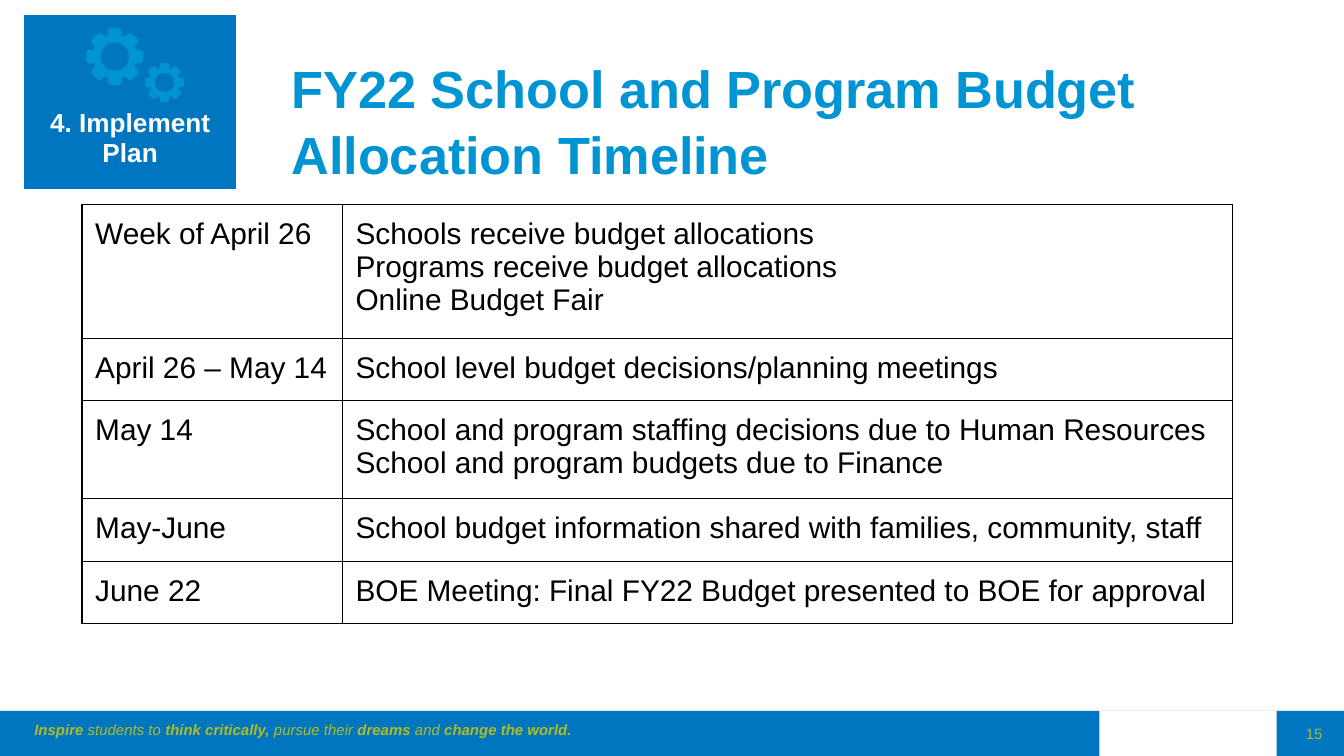
from math import cos, radians, sin

from lxml.etree import SubElement
from pptx import Presentation
from pptx.dml.color import RGBColor as Rgb
from pptx.enum.shapes import MSO_SHAPE as Kind
from pptx.enum.text import MSO_ANCHOR as Anchor, PP_ALIGN as Align
from pptx.oxml.ns import qn
from pptx.util import Cm, Pt

HUES = {"blue": "0076C0", "sky": "0194D3", "lime": "B0BC22",
        "white": "FFFFFF", "black": "000000"}

MOTTO = [("Inspire", True), (" students to ", False),
         ("think critically,", True), (" pursue their ", False),
         ("dreams", True), (" and ", False), ("change the world.", True)]

DATES = [
    ("Week of April 26", ["Schools receive budget allocations",
                          "Programs receive budget allocations",
                          "Online Budget Fair"], 2.44),
    ("April 26 – May 14",
     ["School level budget decisions/planning meetings"], 1.18),
    ("May 14", ["School and program staffing decisions due to Human Resources",
                "School and program budgets due to Finance"], 1.83),
    ("May-June",
     ["School budget information shared with families, community, staff"], 1.18),
    ("June 22",
     ["BOE Meeting: Final FY22 Budget presented to BOE for approval"], 1.18),
]


class Deck:
    """Hold the style and the current slide, and draw each kind of element."""

    font = "Arial"
    pad = Cm(0.25)

    def __init__(self, wide, high):
        self.show = Presentation()
        self.show.slide_width, self.show.slide_height = Cm(wide), Cm(high)
        self.slide = self.show.slides.add_slide(self.show.slide_layouts[6])

    def hue(self, name):
        return Rgb.from_string(HUES[name])

    def fill_text(self, frame, paras, size, hue, align=Align.LEFT, **style):
        frame.word_wrap = True
        for i, runs in enumerate(paras):
            para = frame.add_paragraph() if i else frame.paragraphs[0]
            para.alignment = align
            for text, bold in runs:
                run = para.add_run()
                run.text = text
                form = {"name": self.font, "size": Pt(size), "bold": bold, **style}
                for key, val in form.items():
                    setattr(run.font, key, val)
                run.font.color.rgb = self.hue(hue)

    def inset(self, item, **over):
        sides = ("left", "top", "right", "bottom")
        for key, val in {**dict.fromkeys(sides, self.pad), **over}.items():
            setattr(item, f"margin_{key}", val)

    def text(self, spot, paras, size, hue, anchor=Anchor.TOP, space=1, **style):
        frame = self.slide.shapes.add_textbox(*map(Cm, spot)).text_frame
        self.inset(frame)
        frame.vertical_anchor = anchor
        self.fill_text(frame, paras, size, hue, **style)
        for para in frame.paragraphs:
            para.line_spacing = space

    def shape(self, kind, spot, hue, home=None, turn=0):
        shape = (home or self.slide).shapes.add_shape(kind, *map(Cm, spot))
        shape.shadow.inherit = False
        shape.fill.solid()
        shape.fill.fore_color.rgb = self.hue(hue)
        shape.line.fill.background()
        shape.rotation = turn

    def gear(self, x, y, size):
        group = self.slide.shapes.add_group_shape()

        def part(kind, side, hue, dx=0, dy=0, turn=0):
            spot = (x + dx - side / 2, y + dy - side / 2, side, side)
            self.shape(kind, spot, hue, group, turn)

        part(Kind.OVAL, size, "sky")
        orbit = 0.49 * size
        for turn in range(0, 360, 45):
            part(Kind.SNIP_2_SAME_RECTANGLE, 0.3 * size, "sky",
                 orbit * sin(radians(turn)), -orbit * cos(radians(turn)), turn)
        part(Kind.OVAL, 0.64 * size, "blue")

    def table(self, x, y, cols, rows):
        spot = (x, y, sum(cols), sum(rows))
        grid = self.slide.shapes.add_table(
            len(rows), len(cols), *map(Cm, spot)).table
        grid.first_row = grid.horz_banding = False
        for col, wide in zip(grid.columns, cols):
            col.width = Cm(wide)
        for row, high in zip(grid.rows, rows):
            row.height = Cm(high)
        return grid

    def cell(self, cell, paras, size, hue, edge, fill=None, top=None, **style):
        self.inset(cell, top=top or self.pad)
        props = cell._tc.get_or_add_tcPr()
        for side in ("lnL", "lnR", "lnT", "lnB"):
            line = SubElement(props, qn(f"a:{side}"), w=str(Pt(0.75)))
            solid = SubElement(line, qn("a:solidFill"))
            SubElement(solid, qn("a:srgbClr"), val=HUES[edge])
        if fill:
            cell.fill.solid()
            cell.fill.fore_color.rgb = self.hue(fill)
        else:
            cell.fill.background()
        self.fill_text(cell.text_frame, paras, size, hue, **style)


def main():
    deck = Deck(25.4, 14.29)

    deck.shape(Kind.RECTANGLE, (0, 13.44, 25.4, 0.85), "blue")
    deck.shape(Kind.RECTANGLE, (20.78, 13.44, 3.35, 0.85), "white")
    deck.text((0.4, 13.45, 11.84, 0.64), [MOTTO], 8, "lime", italic=True)
    deck.text((24.43, 13.49, 0.97, 0.76), [[("15", False)]], 8, "lime",
              Anchor.MIDDLE)

    badge = deck.table(0.47, 0.29, [3.98], [3.27])
    deck.cell(badge.cell(0, 0), [[("4. Implement Plan", True)]], 14, "white",
              "blue", fill="blue", top=Cm(1.77), align=Align.CENTER)
    deck.gear(2.17, 1.07, 0.84)
    deck.gear(3.11, 1.56, 0.58)

    title = "FY22 School and Program Budget Allocation Timeline"
    deck.text((5.26, 0.76, 17.83, 2.77), [[(title, True)]], 28, "sky", space=1.05)

    plan = deck.table(1.55, 3.86, [4.92, 16.83], [high for *_, high in DATES])
    for i, (date, steps, _) in enumerate(DATES):
        for j, lines in enumerate(([date], steps)):
            paras = [[(line, False)] for line in lines]
            deck.cell(plan.cell(i, j), paras, 16, "black", "black")

    deck.show.save("out.pptx")


if __name__ == "__main__":
    main()
